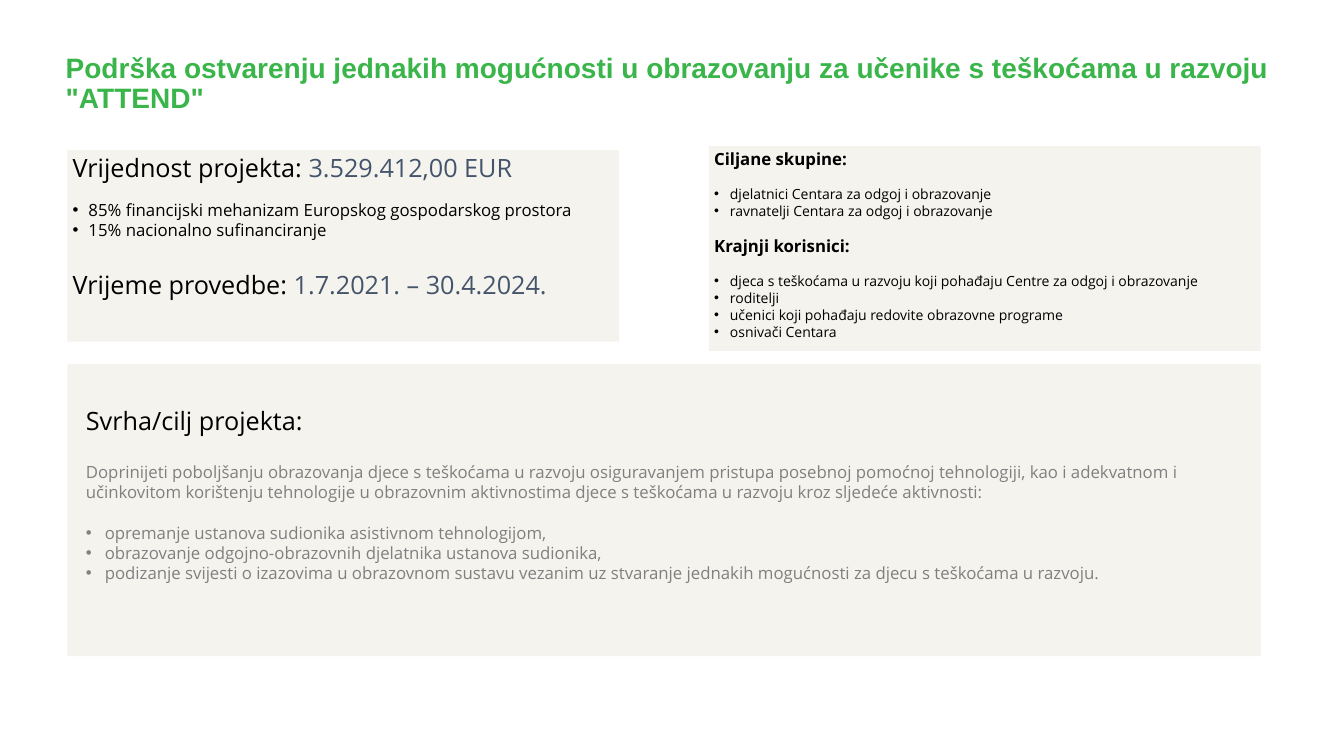
from pptx import Presentation
from pptx.dml.color import RGBColor
from pptx.enum.shapes import MSO_SHAPE
from pptx.enum.text import MSO_ANCHOR
from pptx.util import Pt
from lxml.etree import SubElement
from pptx.oxml.ns import qn

BLACK, GREEN, SLATE, GRAY, CREAM = "000000", "39B54A", "44546A", "808080", "F5F3EE"


def color(hue):
    return RGBColor.from_string(hue)


def panel(slide, x, y, w, h):
    box = slide.shapes.add_shape(MSO_SHAPE.RECTANGLE, Pt(x), Pt(y), Pt(w), Pt(h))
    box.shadow.inherit = False
    box.fill.solid()
    box.fill.fore_color.rgb = color(CREAM)
    box.line.fill.background()


def frame(slide, x, y, w, h):
    text = slide.shapes.add_textbox(Pt(x), Pt(y), Pt(w), Pt(h)).text_frame
    text.word_wrap = True
    text.vertical_anchor = MSO_ANCHOR.TOP
    text.margin_left = text.margin_right = Pt(3.75)
    text.margin_top = text.margin_bottom = Pt(1.5)
    return text


def para(text, runs, size, gap=0, dent=0, bold=False, font="Open Sans"):
    """Add one paragraph of (words, hue) runs; a dent makes it a bullet."""
    first = text.paragraphs[0]
    par = text.add_paragraph() if first.runs else first
    par.space_before = Pt(gap)
    if dent:
        props = par._p.get_or_add_pPr()
        props.set("marL", str(Pt(dent)))
        props.set("indent", str(-Pt(dent)))
        SubElement(props, qn("a:buFont"), typeface="Arial")
        SubElement(props, qn("a:buChar"), char="•")
    for words, hue in runs:
        run = par.add_run()
        run.text = words
        run.font.name = font
        run.font.size = Pt(size)
        run.font.bold = bold
        run.font.color.rgb = color(hue)
    return par


def bullets(text, items, size, gap, dent, hue=BLACK):
    for i, item in enumerate(items):
        para(text, [(item, hue)], size, 0 if i else gap, dent)


# Heading across the top
def title(slide, x, y, w, h):
    text = frame(slide, x, y, w, h)
    words = ("Podrška ostvarenju jednakih mogućnosti u obrazovanju "
             "za učenike s teškoćama u razvoju \"ATTEND\"")
    par = para(text, [(words, GREEN)], 20, bold=True, font="Arial")
    par.line_spacing = 0.9


# Project value and dates
def facts(slide, x, y, w, h):
    panel(slide, x, y, w, h)
    text = frame(slide, x, y, w, h)
    para(text, [("Vrijednost projekta: ", BLACK), ("3.529.412,00 EUR", SLATE)], 18)
    bullets(text, ["85% financijski mehanizam Europskog gospodarskog prostora",
                   "15% nacionalno sufinanciranje"], 12, 12, 11.25)
    para(text, [("Vrijeme provedbe: ", BLACK), ("1.7.2021. – 30.4.2024.", SLATE)], 18, 21.5)


# Target groups and end users
def groups(slide, x, y, w, h):
    panel(slide, x, y, w, h)
    text = frame(slide, x, y, w, h)
    para(text, [("Ciljane skupine:", BLACK)], 12, bold=True)
    bullets(text, ["djelatnici Centara za odgoj i obrazovanje",
                   "ravnatelji Centara za odgoj i obrazovanje"], 10, 12, 11.25)
    para(text, [("Krajnji korisnici:", BLACK)], 12, 12, bold=True)
    bullets(text, ["djeca s teškoćama u razvoju koji pohađaju Centre za odgoj i obrazovanje",
                   "roditelji",
                   "učenici koji pohađaju redovite obrazovne programe",
                   "osnivači Centara"], 10, 12, 11.25)


# Purpose of the project
def purpose(slide, x, y, w, h):
    panel(slide, x, y, w, h)
    text = frame(slide, x + 9.4, y + 28, w - 9.4, h - 28)
    para(text, [("Svrha/cilj projekta:", BLACK)], 18)
    para(text, [("Doprinijeti poboljšanju obrazovanja djece s teškoćama u razvoju "
                 "osiguravanjem pristupa posebnoj pomoćnoj tehnologiji, kao i adekvatnom i "
                 "učinkovitom korištenju tehnologije u obrazovnim aktivnostima djece s "
                 "teškoćama u razvoju kroz sljedeće aktivnosti:", GRAY)], 12, 19)
    bullets(text, ["opremanje ustanova sudionika asistivnom tehnologijom,",
                   "obrazovanje odgojno-obrazovnih djelatnika ustanova sudionika,",
                   "podizanje svijesti o izazovima u obrazovnom sustavu vezanim uz stvaranje "
                   "jednakih mogućnosti za djecu s teškoćama u razvoju."], 12, 14.3, 13.5, GRAY)


def main():
    deck = Presentation()
    deck.slide_width, deck.slide_height = Pt(960), Pt(540)
    slide = deck.slides.add_slide(deck.slide_layouts[6])
    title(slide, 43.2, 37.4, 873.4, 62.6)
    facts(slide, 48.2, 107.3, 394, 136.8)
    groups(slide, 506.4, 104.4, 394, 146.2)
    purpose(slide, 48.2, 259.9, 852.5, 208.8)
    deck.save("out.pptx")


if __name__ == "__main__":
    main()
